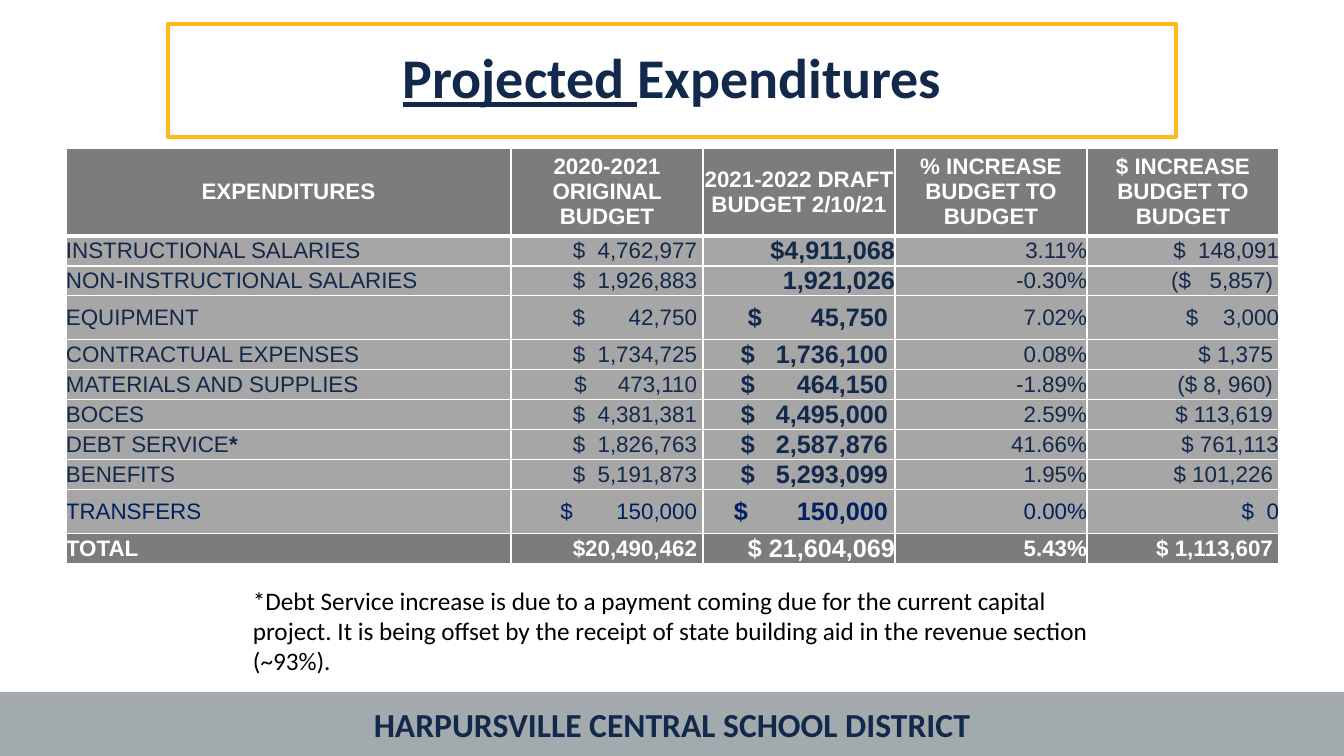
from lxml import etree
from pptx import Presentation
from pptx import util as u
from pptx.dml.color import RGBColor
from pptx.enum import shapes, text
from pptx.oxml import ns

NAVY = RGBColor(0x13, 0x29, 0x4B)
DEEP_BLUE = RGBColor(0x00, 0x20, 0x60)
GOLD = RGBColor(0xFF, 0xB8, 0x1C)
SILVER = RGBColor(0xA2, 0xAA, 0xAD)
DARK_GRAY = RGBColor(0x7C, 0x7C, 0x7C)
LIGHT_GRAY = RGBColor(0xA6, 0xA6, 0xA6)
WHITE = RGBColor(0xFF, 0xFF, 0xFF)
BLACK = RGBColor(0x00, 0x00, 0x00)

PX = 12192000 / 1344
SPACE_WIDTH = 0.278  # Arial space, in ems
CENTER, RIGHT, LEFT = text.PP_ALIGN.CENTER, text.PP_ALIGN.RIGHT, text.PP_ALIGN.LEFT

COLUMNS = [445, 192, 192, 192, 192]
HEADER = [
    "EXPENDITURES",
    "2020-2021 ORIGINAL BUDGET",
    "2021-2022 DRAFT BUDGET 2/10/21",
    "% INCREASE BUDGET TO BUDGET",
    "$ INCREASE BUDGET TO BUDGET",
]
# Money is (text, width of the gap after the dollar sign in spaces, inset in px).
EXPENDITURES = [
    ("INSTRUCTIONAL SALARIES", ("$ 4,762,977", 2, 6), ("$4,911,068", 1, 0),
     "3.11%", ("$ 148,091", 2, 0)),
    ("NON-INSTRUCTIONAL SALARIES", ("$ 1,926,883", 2, 6), ("1,921,026", 1, 0),
     "-0.30%", ("($ 5,857)", 3, 6)),
    ("EQUIPMENT", ("$ 42,750", 7, 6), ("$ 45,750", 7, 7),
     "7.02%", ("$ 3,000", 4, 0)),
    ("CONTRACTUAL EXPENSES", ("$ 1,734,725", 2, 6), ("$ 1,736,100", 3, 7),
     "0.08%", ("$ 1,375", 1, 6)),
    ("MATERIALS AND SUPPLIES", ("$ 473,110", 5, 6), ("$ 464,150", 6, 7),
     "-1.89%", ("($ 8, 960)", 1, 6)),
    ("BOCES", ("$ 4,381,381", 2, 6), ("$ 4,495,000", 3, 7),
     "2.59%", ("$ 113,619", 1, 6)),
    ("DEBT SERVICE*", ("$ 1,826,763", 2, 6), ("$ 2,587,876", 3, 7),
     "41.66%", ("$ 761,113", 1, 0)),
    ("BENEFITS", ("$ 5,191,873", 2, 6), ("$ 5,293,099", 3, 7),
     "1.95%", ("$ 101,226", 1, 6)),
    ("TRANSFERS", ("$ 150,000", 7, 6), ("$ 150,000", 7, 7),
     "0.00%", ("$ 0", 2, 0)),
    ("TOTAL", ("$20,490,462", 1, 6), ("$ 21,604,069", 1, 0),
     "5.43%", ("$ 1,113,607", 1, 6)),
]
TALL_ROWS = {"EQUIPMENT", "TRANSFERS"}


def px(length):
    return u.Emu(round(length * PX))


class BudgetSlide:
    def __init__(self, deck):
        self.page = deck.slides.add_slide(deck.slide_layouts[5])
        self.body_font = "Calibri"
        self.table_font = "Arial"

    def style(self, paragraph, name, size, color, bold=False, align=LEFT):
        paragraph.alignment = align
        font = paragraph.font
        font.name, font.size, font.bold = name, u.Pt(size), bold
        font.color.rgb = color

    def title(self, underlined, plain):
        box = self.page.shapes.title
        box.left, box.top, box.width, box.height = map(px, (168, 24, 1008, 113))
        box.line.color.rgb = GOLD
        box.line.width = u.Pt(3)
        box.text_frame.vertical_anchor = text.MSO_ANCHOR.MIDDLE
        paragraph = box.text_frame.paragraphs[0]
        paragraph.line_spacing = 0.9
        self.style(paragraph, self.body_font, 40, NAVY, True, CENTER)
        span = paragraph.add_run()
        span.text = underlined
        span.font.underline = True
        paragraph.add_run().text = plain

    def footer(self, words):
        band = self.page.shapes.add_shape(
            shapes.MSO_SHAPE.RECTANGLE, *map(px, (0, 692, 1344, 64)))
        band.shadow.inherit = False
        band.fill.solid()
        band.fill.fore_color.rgb = SILVER
        band.line.fill.background()
        band.text_frame.vertical_anchor = text.MSO_ANCHOR.MIDDLE
        paragraph = band.text_frame.paragraphs[0]
        paragraph.text = words
        self.style(paragraph, self.body_font, 24, NAVY, True, CENTER)

    def note(self, words):
        box = self.page.shapes.add_textbox(*map(px, (243, 580, 857, 102)))
        box.text_frame.word_wrap = True
        box.text_frame.auto_size = text.MSO_AUTO_SIZE.SHAPE_TO_FIT_TEXT
        paragraph = box.text_frame.paragraphs[0]
        paragraph.text = words
        self.style(paragraph, self.body_font, 18, BLACK)

    def borders(self, cell, top=1, bottom=1):
        properties = cell._tc.get_or_add_tcPr()
        for side, points in (("L", 1), ("R", 1), ("T", top), ("B", bottom)):
            line = etree.SubElement(properties, ns.qn(f"a:ln{side}"), w=str(u.Pt(points)))
            fill = etree.SubElement(line, ns.qn("a:solidFill"))
            etree.SubElement(fill, ns.qn("a:srgbClr"), val=str(WHITE))

    def cell(self, cell, fill, inset=0, **edges):
        """Prepare a table cell and return its paragraph."""
        cell.margin_left = cell.margin_top = cell.margin_bottom = 0
        cell.margin_right = px(inset)
        cell.vertical_anchor = text.MSO_ANCHOR.MIDDLE
        self.borders(cell, **edges)
        cell.fill.solid()
        cell.fill.fore_color.rgb = fill
        return cell.text_frame.paragraphs[0]

    def money(self, paragraph, words, gap, size):
        """Write an amount, widening the space after its dollar sign."""
        if gap == 1:
            paragraph.text = words
            return
        sign, amount = words.split(" ", 1)
        spans = [paragraph.add_run() for _ in range(3)]
        for span, part in zip(spans, (sign, " ", amount)):
            span.text = part
        extra = round((gap - 1) * SPACE_WIDTH * size * 100)
        spans[1]._r.get_or_add_rPr().set("spc", str(extra))

    def label(self, paragraph, words):
        name = words.rstrip("*")
        paragraph.add_run().text = name
        if name != words:
            star = paragraph.add_run()
            star.text = "*"
            star.font.bold = True

    def table(self, header, rows):
        heights = [88] + [44 if row[0] in TALL_ROWS else 30 for row in rows]
        grid = self.page.shapes.add_table(
            len(heights), len(COLUMNS),
            *map(px, (66, 148, sum(COLUMNS), sum(heights)))).table
        grid.horz_banding = False
        for column, width in zip(grid.columns, COLUMNS):
            column.width = px(width)
        for row, height in zip(grid.rows, heights):
            row.height = px(height)
        for column, words in enumerate(header):
            paragraph = self.cell(grid.cell(0, column), DARK_GRAY, bottom=3)
            paragraph.text = words
            self.style(paragraph, self.table_font, 16, WHITE, True, CENTER)
        for index, row in enumerate(rows, 1):
            self.table_row(grid, index, row)

    def table_row(self, grid, index, row):
        total = row[0] == "TOTAL"
        color = WHITE if total else DEEP_BLUE if row[0] == "TRANSFERS" else NAVY
        for column, value in enumerate(row):
            words, gap, inset = (value, 1, 0) if isinstance(value, str) else value
            draft = column == 2
            size = 18 if draft else 16
            paragraph = self.cell(
                grid.cell(index, column), DARK_GRAY if total else LIGHT_GRAY,
                inset, top=3 if index == 1 else 1)
            if column == 0:
                self.label(paragraph, words)
            else:
                self.money(paragraph, words, gap, size)
            self.style(paragraph, self.table_font, size, color,
                       total or draft, RIGHT if column else LEFT)


def main():
    deck = Presentation()
    deck.slide_width, deck.slide_height = px(1344), px(756)
    slide = BudgetSlide(deck)
    slide.footer("HARPURSVILLE CENTRAL SCHOOL DISTRICT")
    slide.title("Projected ", "Expenditures")
    slide.table(HEADER, EXPENDITURES)
    slide.note(
        "*Debt Service increase is due to a payment coming due for the current "
        "capital project. It is being offset by the receipt of state building aid "
        "in the revenue section (~93%).")
    deck.save("out.pptx")


if __name__ == "__main__":
    main()
